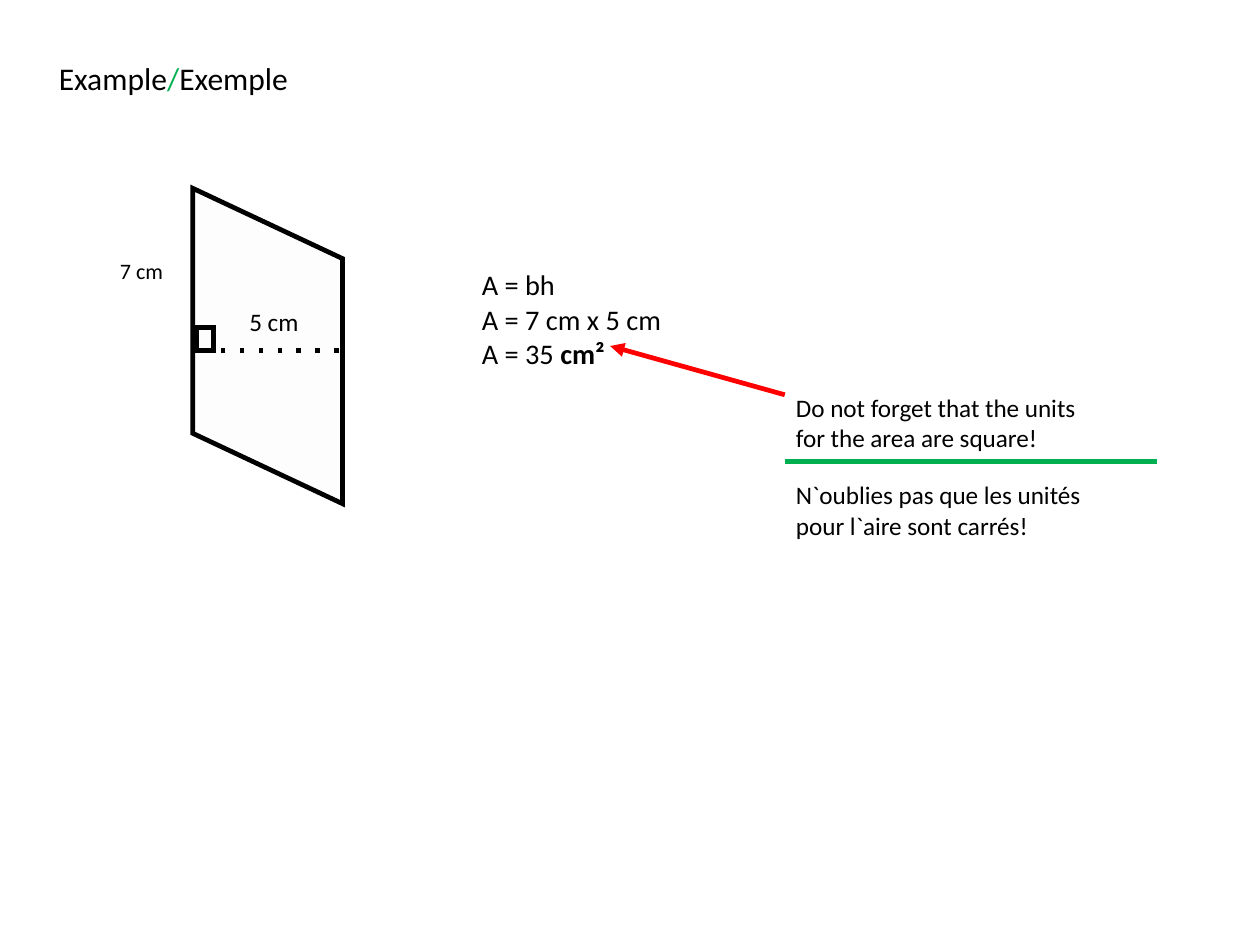
from lxml.etree import SubElement
from pptx import Presentation
from pptx.dml.color import RGBColor
from pptx.enum.shapes import MSO_CONNECTOR as Connector, MSO_SHAPE as Shape
from pptx.enum.text import MSO_AUTO_SIZE as AutoSize
from pptx.oxml.ns import qn
from pptx.util import Emu, Pt

PX = 9144  # EMU per px, 100 px to the inch
FONT = "Calibri"
STROKE = 3
COLORS = {
    "black": "000000",
    "green": "00B050",
    "red": "FF0000",
    "pale": "FDFDFD",
}


def px(value):
    return Emu(value * PX)


def color(name):
    return RGBColor.from_string(COLORS[name])


def style_line(line, name):
    line.color.rgb = color(name)
    line.width = Pt(STROKE)


def add_outline(shape, fill=None):
    """Give a closed shape a black mitred outline and an optional fill."""
    shape.shadow.inherit = False
    if fill:
        shape.fill.solid()
        shape.fill.fore_color.rgb = color(fill)
    else:
        shape.fill.background()
    style_line(shape.line, "black")
    SubElement(shape.line._get_or_add_ln(), qn("a:miter"), lim="800000")


def add_polygon(page, points, fill):
    builder = page.shapes.build_freeform(*points[0], scale=PX)
    builder.add_line_segments(points[1:], close=True)
    add_outline(builder.convert_to_shape(), fill)


def add_line(page, start, end, name, dash=None, arrow=None):
    line = page.shapes.add_connector(
        Connector.STRAIGHT, *(px(value) for value in start + end))
    style_line(line.line, name)
    outline = line.line._get_or_add_ln()
    if dash:
        SubElement(outline, qn("a:prstDash"), val=dash)
    if arrow:
        SubElement(outline, qn("a:tailEnd"), type=arrow)
    SubElement(line._element.spPr, qn("a:effectLst"))


def add_span(para, text, size=16, name="black", bold=False):
    span = para.add_run()
    span.text = text
    span.font.name = FONT
    span.font.size = Pt(size)
    span.font.bold = bold
    span.font.color.rgb = color(name)


def add_text(page, area, paragraphs, size, gaps=()):
    """Each paragraph is a list of (text, format); gaps maps index to points."""
    box = page.shapes.add_textbox(*(px(value) for value in area))
    frame = box.text_frame
    frame.word_wrap = True
    frame.auto_size = AutoSize.SHAPE_TO_FIT_TEXT
    for index, spans in enumerate(paragraphs):
        para = frame.add_paragraph() if index else frame.paragraphs[0]
        if index in gaps:
            para.space_before = Pt(gaps[index])
        for text, style in spans:
            add_span(para, text, size=size, **style)


def main():
    deck = Presentation()
    deck.slide_width, deck.slide_height = px(1111), px(833)
    page = deck.slides.add_slide(deck.slide_layouts[6])

    # Title
    add_text(page, (42, 47, 290, 44),
             [[("Example", {}), ("/", {"name": "green"}), ("Exemple", {})]], 20)

    # Parallelogram with its height and right angle
    add_polygon(page, [(170, 166), (302, 228), (302, 444), (170, 382)], "pale")
    add_line(page, (299, 309), (167, 309), "black", dash="dot")
    add_outline(page.shapes.add_shape(
        Shape.RECTANGLE, px(173), px(289), px(15), px(20)))
    add_text(page, (96, 222, 100, 34), [[("7 cm", {})]], 14)
    add_text(page, (210, 265, 100, 37), [[("5 cm", {})]], 16)

    # Area calculation
    add_text(page, (415, 231, 289, 101), [
        [("A = bh", {})],
        [("A = 7 cm x 5 cm", {})],
        [("A = 35 ", {}), ("cm²", {"bold": True})],
    ], 18)

    # Reminder about units
    add_line(page, (692, 348), (538, 305), "red", arrow="triangle")
    add_text(page, (692, 341, 406, 165), [
        [("Do not forget that the units", {})],
        [("for the area are square!", {})],
        [("N`oublies pas que les unités", {})],
        [("pour l`aire sont carrés!", {})],
    ], 16, gaps={2: 17})
    add_line(page, (692, 407), (1020, 407), "green")

    deck.save("out.pptx")


if __name__ == "__main__":
    main()
